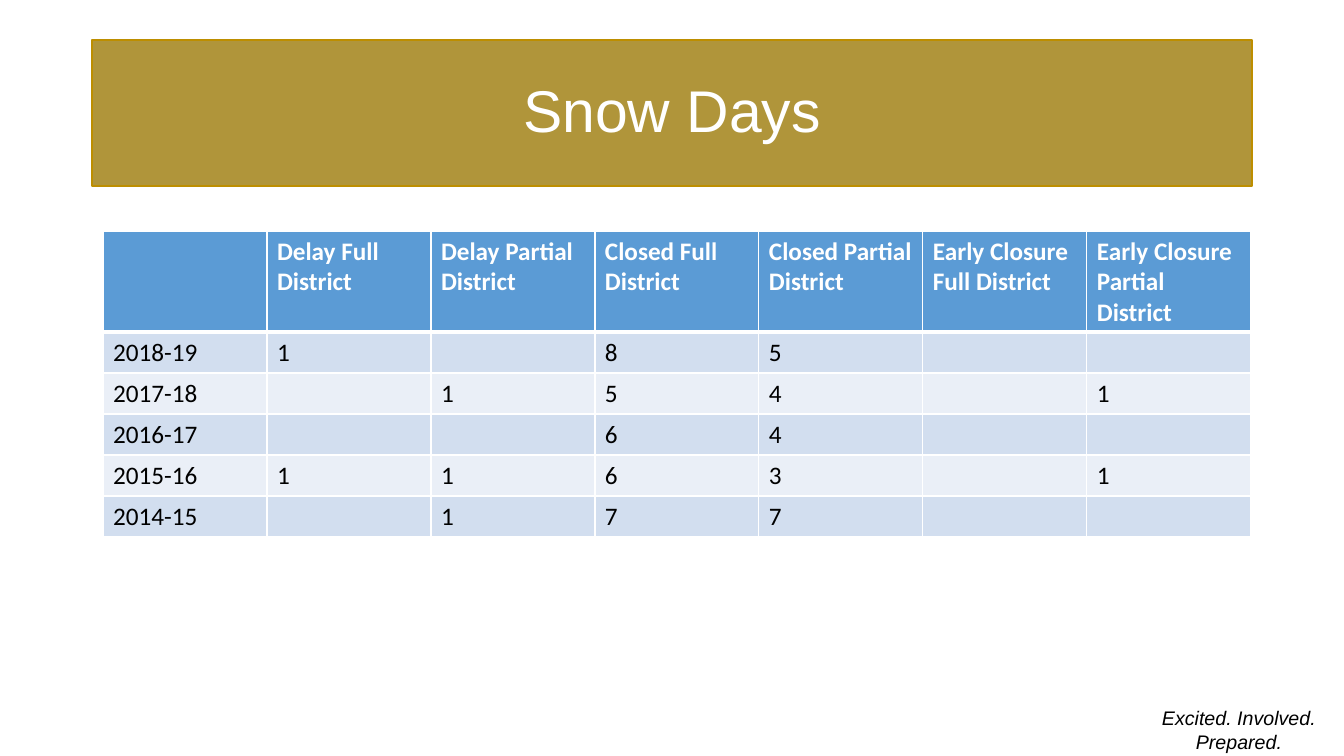
from lxml import etree
from pptx import Presentation
from pptx import util as u
from pptx.dml.color import RGBColor
from pptx.enum import text
from pptx.oxml import ns

SCALE = 914400 / 100.8
GOLD = RGBColor(0xB0, 0x95, 0x3A)
DARK_GOLD = RGBColor(0xBD, 0x8E, 0x00)
WHITE = RGBColor(0xFF, 0xFF, 0xFF)
BLACK = RGBColor(0x00, 0x00, 0x00)
HEADER_BLUE = RGBColor(0x5B, 0x9B, 0xD5)
BAND_DARK = RGBColor(0xD2, 0xDE, 0xEF)
BAND_LIGHT = RGBColor(0xEA, 0xEF, 0xF7)

HEADER_HEIGHT = 101
ROW_HEIGHT = 41
SNOW_DAYS = [
    ["", "Delay Full District", "Delay Partial District", "Closed Full District",
     "Closed Partial District", "Early Closure Full District",
     "Early Closure Partial District"],
    ["2018-19", "1", "", "8", "5", "", ""],
    ["2017-18", "", "1", "5", "4", "", "1"],
    ["2016-17", "", "", "6", "4", "", ""],
    ["2015-16", "1", "1", "6", "3", "", "1"],
    ["2014-15", "", "1", "7", "7", "", ""],
]


def px(length):
    return u.Emu(round(length * SCALE))


def write(frame, words, *, size, color, font="Arial", bold=False, italic=False,
          align=text.PP_ALIGN.LEFT, line_spacing=None):
    frame.word_wrap = True
    paragraph = frame.paragraphs[0]
    paragraph.text = words
    paragraph.alignment = align
    paragraph.line_spacing = line_spacing
    for run in paragraph.runs:
        run.font.name = font
        run.font.size = u.Pt(size)
        run.font.bold = bold
        run.font.italic = italic
        run.font.color.rgb = color


def add_border(cell, side, points):
    line = etree.SubElement(cell._tc.get_or_add_tcPr(), ns.qn(f"a:ln{side}"),
                            w=str(u.Pt(points)))
    fill = etree.SubElement(line, ns.qn("a:solidFill"))
    etree.SubElement(fill, ns.qn("a:srgbClr"), val=str(WHITE))


def place_title(slide, left, top, width, height):
    title = slide.shapes.title
    title.left, title.top, title.width, title.height = map(px, (left, top, width, height))
    title.fill.solid()
    title.fill.fore_color.rgb = GOLD
    title.line.color.rgb = DARK_GOLD
    title.line.width = u.Pt(1)
    frame = title.text_frame
    frame.auto_size = text.MSO_AUTO_SIZE.NONE
    frame.vertical_anchor = text.MSO_ANCHOR.MIDDLE
    write(frame, "Snow Days", size=42, color=WHITE,
          align=text.PP_ALIGN.CENTER, line_spacing=0.9)


def place_table(slide, left, top, column_width):
    row_count, column_count = len(SNOW_DAYS), len(SNOW_DAYS[0])
    height = HEADER_HEIGHT + ROW_HEIGHT * (row_count - 1)
    table = slide.shapes.add_table(row_count, column_count, px(left), px(top),
                                   px(column_width * column_count), px(height)).table
    table.first_row = table.horz_banding = False
    for column in table.columns:
        column.width = px(column_width)
    for index, values in enumerate(SNOW_DAYS):
        header = index == 0
        table.rows[index].height = px(HEADER_HEIGHT if header else ROW_HEIGHT)
        band = HEADER_BLUE if header else BAND_DARK if index % 2 else BAND_LIGHT
        borders = {"L": 1, "R": 1, "T": 3 if index == 1 else 1, "B": 3 if header else 1}
        for cell, value in zip(table.rows[index].cells, values):
            for side, points in borders.items():
                add_border(cell, side, points)
            cell.fill.solid()
            cell.fill.fore_color.rgb = band
            if value:
                write(cell.text_frame, value, size=18, font="Calibri",
                      color=WHITE if header else BLACK, bold=header)


def place_motto(slide, left, top, width, height):
    motto = slide.shapes.add_textbox(*map(px, (left, top, width, height)))
    write(motto.text_frame, "Excited. Involved.\vPrepared.", size=14, color=BLACK,
          italic=True, align=text.PP_ALIGN.CENTER)


def main():
    presentation = Presentation()
    presentation.slide_width = px(1344)
    presentation.slide_height = px(756)
    slide = presentation.slides.add_slide(presentation.slide_layouts[5])
    place_motto(slide, 1135, 701, 208, 55)
    place_title(slide, 92, 40, 1160, 146)
    place_table(slide, 103, 231, 164)
    presentation.save("out.pptx")


if __name__ == "__main__":
    main()
